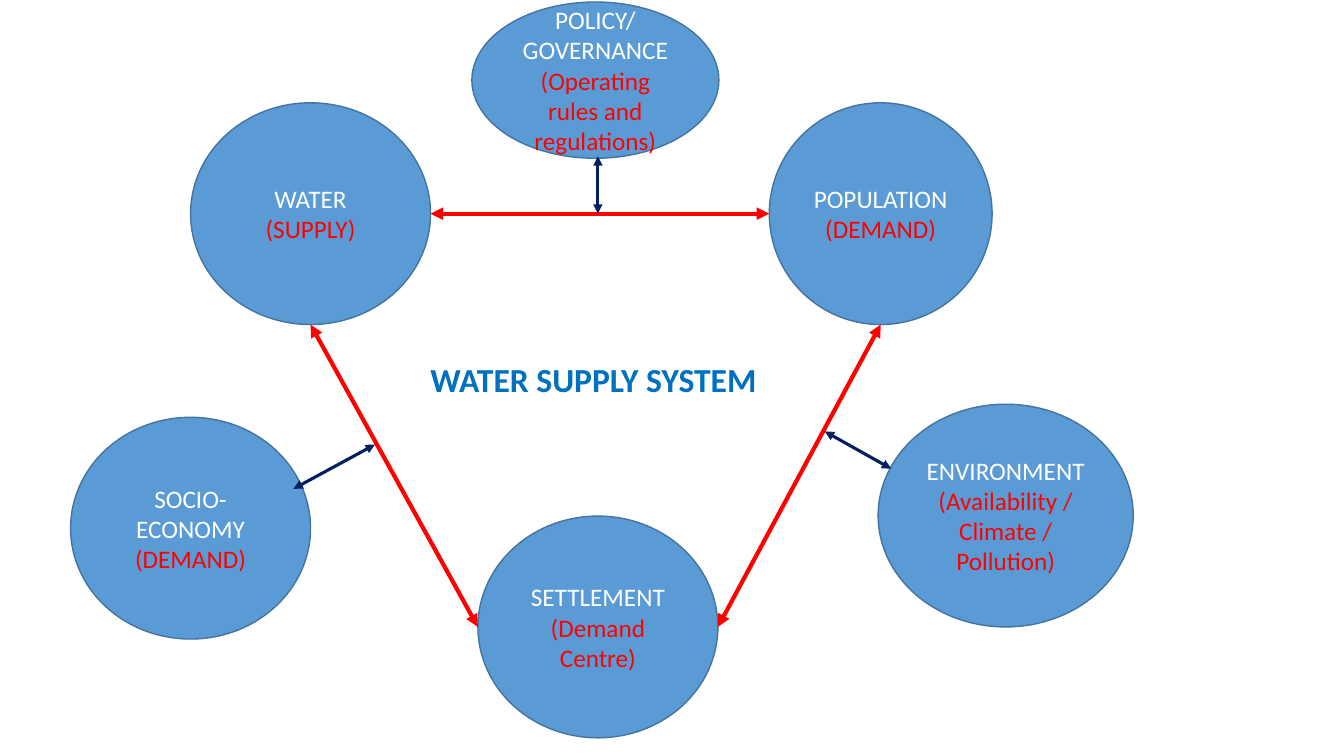
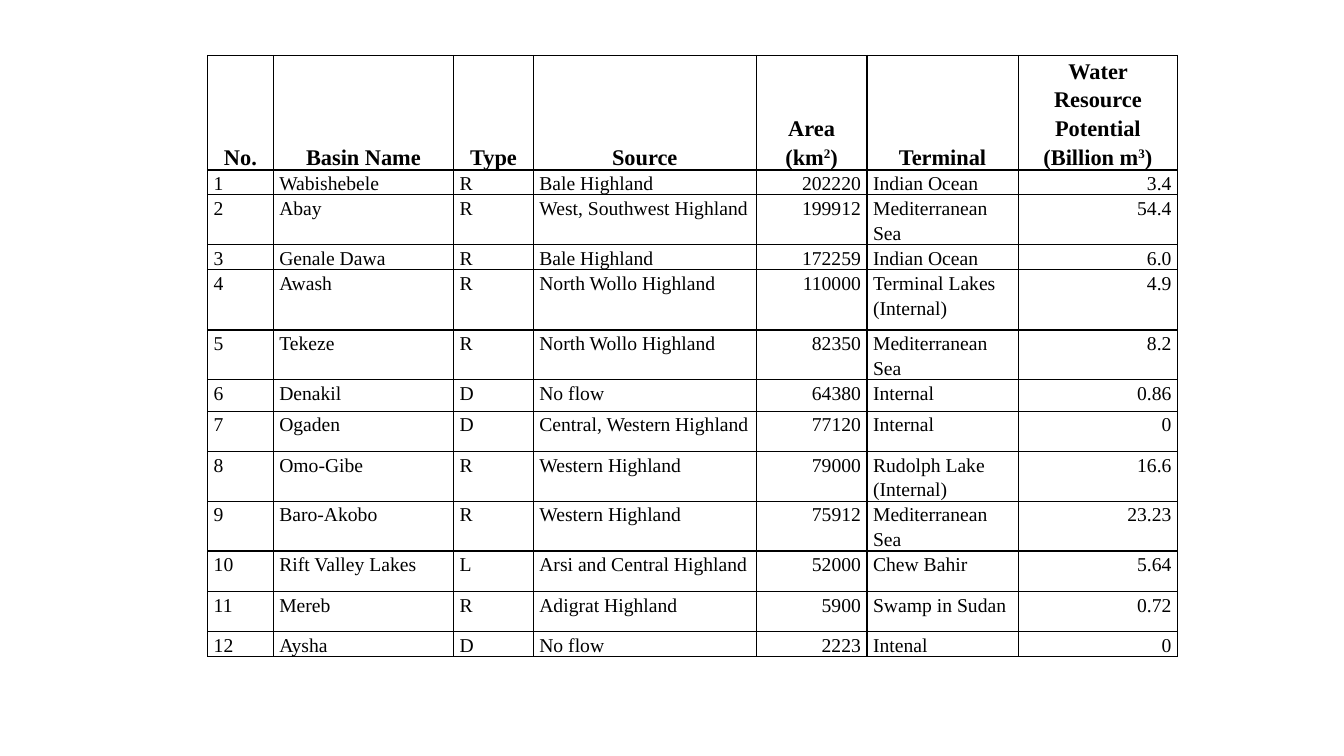
from lxml.etree import SubElement as Sub
from pptx import Presentation
from pptx.dml.color import RGBColor as RGB
from pptx.enum.shapes import MSO_CONNECTOR as Link, MSO_SHAPE as Form
from pptx.enum.text import MSO_ANCHOR as Anchor, PP_ALIGN as Align
from pptx.oxml.ns import qn
from pptx.util import Inches, Pt

WHITE = RGB(0xFF, 0xFF, 0xFF)
BLACK = RGB(0, 0, 0)
RED = RGB(0xFF, 0, 0)
NAVY = RGB(0, 0x20, 0x60)
TITLE = RGB(0, 0x70, 0xC0)
BLUE = RGB(0x5B, 0x9B, 0xD5)
EDGE = RGB(0x43, 0x73, 0x9E)

ROUNDS = {
    "water": (1.89, 1.02, 2.38, 2.2, "WATER", "(SUPPLY)"),
    "people": (7.63, 1.02, 2.21, 2.2, "POPULATION", "(DEMAND)"),
    "money": (0.7, 4.14, 2.38, 2.2, "SOCIO-ECONOMY", "(DEMAND)"),
    "nature": (8.71, 4.01, 2.53, 2.21, "ENVIRONMENT",
               "(Availability / Climate / Pollution)"),
    "policy": (4.68, 0.02, 2.45, 1.55, "POLICY/ GOVERNANCE",
               "(Operating rules and regulations)"),
    "town": (4.74, 5.12, 2.38, 2.2, "SETTLEMENT", "(Demand Centre)"),
}
MAIN = [("water", "right", "people", "left"),
        ("water", "bottom", "town", "left"),
        ("town", "right", "people", "bottom")]
SIDE = [((2.91, 4.85), (3.72, 4.41)),
        ((8.84, 4.65), (8.18, 4.28)),
        ((5.93, 1.55), (5.93, 2.12))]

COLS = [0.65, 1.79, 0.79, 2.21, 1.1, 1.5, 1.58]
HIGHS = [1.09, 0.2, 0.4, 0.2, 0.6, 0.4, 0.31] + [0.4] * 5 + [0.2]
SIDES = [Align.LEFT] * 4 + [Align.RIGHT, Align.LEFT, Align.RIGHT]
HEAD = [["No."], ["Basin Name"], ["Type"], ["Source"], ["Area (km", "2", ")"],
        ["Terminal"], ["Water Resource Potential (Billion m", "3", ")"]]
BASINS = [
    ("Wabishebele", "R", "Bale Highland", "202220", "Indian Ocean", "3.4"),
    ("Abay", "R", "West, Southwest Highland", "199912", "Mediterranean Sea", "54.4"),
    ("Genale Dawa", "R", "Bale Highland", "172259", "Indian Ocean", "6.0"),
    ("Awash", "R", "North Wollo Highland", "110000", "Terminal Lakes (Internal)", "4.9"),
    ("Tekeze", "R", "North Wollo Highland", "82350", "Mediterranean Sea", "8.2"),
    ("Denakil", "D", "No flow", "64380", "Internal", "0.86"),
    ("Ogaden", "D", "Central, Western Highland", "77120", "Internal", "0"),
    ("Omo-Gibe", "R", "Western Highland", "79000", "Rudolph Lake (Internal)", "16.6"),
    ("Baro-Akobo", "R", "Western Highland", "75912", "Mediterranean Sea", "23.23"),
    ("Rift Valley Lakes", "L", "Arsi and Central Highland", "52000", "Chew Bahir", "5.64"),
    ("Mereb", "R", "Adigrat Highland", "5900", "Swamp in Sudan", "0.72"),
    ("Aysha", "D", "No flow", "2223", "Intenal", "0"),
]


def spot(name, side):
    x, y, w, h = ROUNDS[name][:4]
    return {"left": (x, y + h / 2), "right": (x + w, y + h / 2),
            "bottom": (x + w / 2, y + h)}[side]


class Deck:
    """Hold the style and current slide, and draw each kind of element."""

    def __init__(self):
        self.show = Presentation()
        self.show.slide_width = Inches(13.33)
        self.show.slide_height = Inches(7.5)

    def page(self):
        self.slide = self.show.slides.add_slide(self.show.slide_layouts[6])

    def run(self, para, text, size, color, face="Calibri", bold=False):
        run = para.add_run()
        run.text = text
        font = run.font
        font.name, font.size, font.bold = face, Pt(size), bold
        font.color.rgb = color
        return run

    def round(self, x, y, w, h, name, note):
        shape = self.slide.shapes.add_shape(
            Form.OVAL, Inches(x), Inches(y), Inches(w), Inches(h))
        shape.shadow.inherit = False
        shape.fill.solid()
        shape.fill.fore_color.rgb = BLUE
        shape.line.color.rgb = EDGE
        shape.line.width = Pt(1)
        frame = shape.text_frame
        frame.word_wrap = True
        frame.vertical_anchor = Anchor.MIDDLE
        first = frame.paragraphs[0]
        for para, text, color in ((first, name, WHITE),
                                  (frame.add_paragraph(), note, RED)):
            para.alignment = Align.CENTER
            self.run(para, text, 18, color)

    def arrow(self, start, end, color, width):
        line = self.slide.shapes.add_connector(
            Link.STRAIGHT, *[Inches(v) for v in (*start, *end)])
        line.line.color.rgb = color
        line.line.width = Pt(width)
        props = line.element.spPr
        for tip in ("a:headEnd", "a:tailEnd"):
            Sub(props.find(qn("a:ln")), qn(tip), type="triangle")
        Sub(props, qn("a:effectLst"))

    def label(self, x, y, w, h, text):
        box = self.slide.shapes.add_textbox(
            Inches(x), Inches(y), Inches(w), Inches(h))
        box.text_frame.word_wrap = True
        para = box.text_frame.paragraphs[0]
        para.alignment = Align.CENTER
        self.run(para, text, 24, TITLE, bold=True)

    def border(self, cell):
        props = cell._tc.get_or_add_tcPr()
        for side in ("a:lnL", "a:lnR", "a:lnT", "a:lnB"):
            line = Sub(props, qn(side), w=str(Pt(1)))
            fill = Sub(line, qn("a:solidFill"))
            Sub(fill, qn("a:srgbClr"), val=str(BLACK))

    def cell(self, cell, parts, align, head):
        self.border(cell)
        cell.fill.background()
        cell.margin_left = cell.margin_right = Inches(0.06)
        cell.margin_top = cell.margin_bottom = 0
        cell.vertical_anchor = Anchor.BOTTOM if head else Anchor.TOP
        para = cell.text_frame.paragraphs[0]
        para.alignment = Align.CENTER if head else align
        para.line_spacing = 1.15
        para.space_after = Pt(10)
        for i, part in enumerate(parts):
            run = self.run(para, part, 16 if head else 14, BLACK,
                           "Times New Roman", head)
            if i == 1:
                run.font._element.set("baseline", "30000")

    def table(self, x, y, rows):
        table = self.slide.shapes.add_table(
            len(rows), len(COLS), Inches(x), Inches(y),
            Inches(sum(COLS)), Inches(sum(HIGHS))).table
        table.first_row = table.horz_banding = False
        for col, wide in zip(table.columns, COLS):
            col.width = Inches(wide)
        for r, (row, high) in enumerate(zip(table.rows, HIGHS)):
            row.height = Inches(high)
            for cell, parts, align in zip(row.cells, rows[r], SIDES):
                self.cell(cell, parts, align, r == 0)


def main():
    deck = Deck()
    deck.page()
    for item in ROUNDS.values():
        deck.round(*item)
    for a, out, b, into in MAIN:
        deck.arrow(spot(a, out), spot(b, into), RED, 3)
    for start, end in SIDE:
        deck.arrow(start, end, NAVY, 2.25)
    deck.label(4.14, 3.51, 3.49, 0.5, "WATER SUPPLY SYSTEM")

    deck.page()
    body = [[[str(n)]] + [[text] for text in basin]
            for n, basin in enumerate(BASINS, 1)]
    deck.table(2.06, 0.55, [HEAD] + body)
    deck.show.save("out.pptx")


if __name__ == "__main__":
    main()
